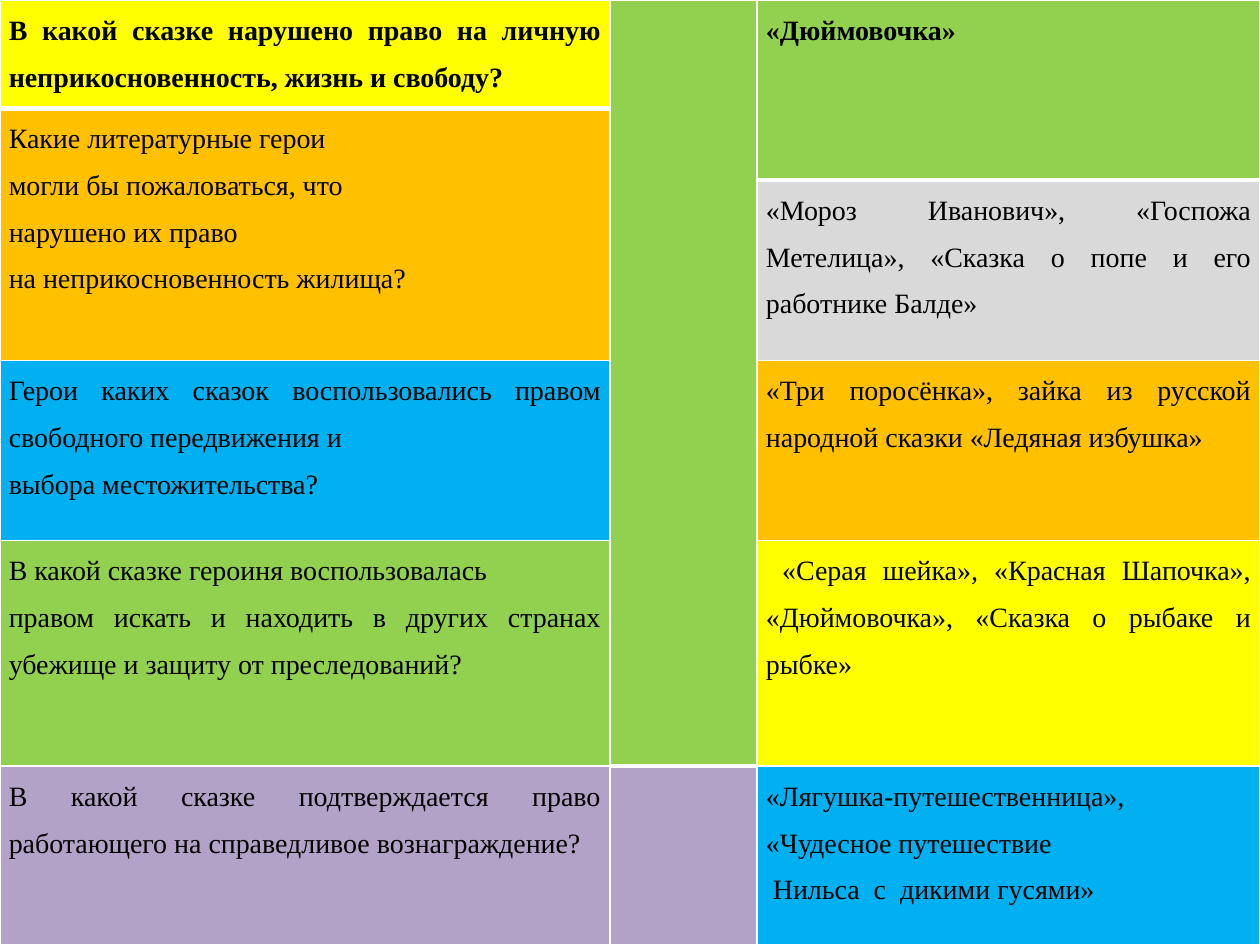
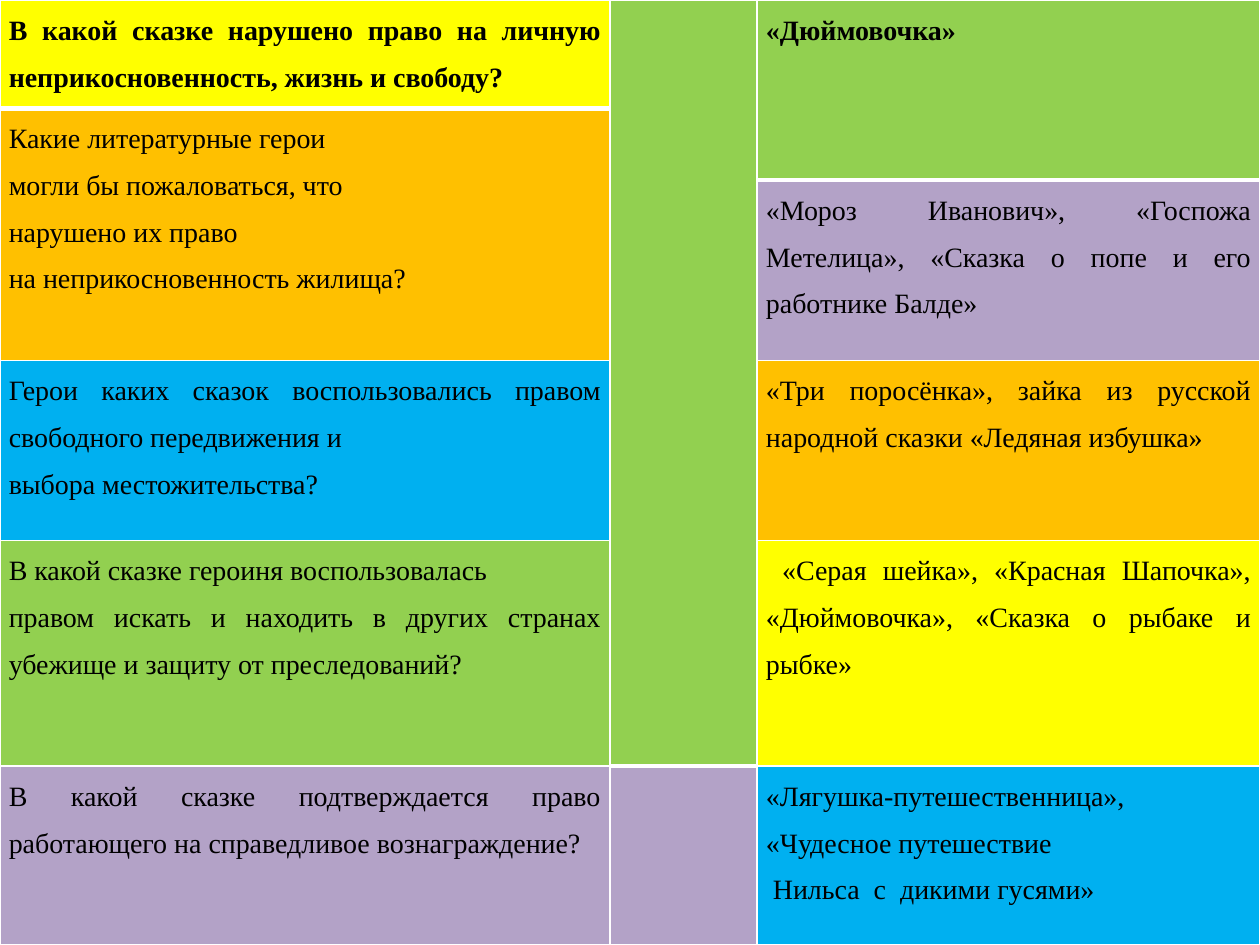
from dataclasses import dataclass

from lxml import etree
from pptx import Presentation
from pptx.dml.color import RGBColor as RGB
from pptx.enum.text import PP_ALIGN as Align
from pptx.oxml.ns import qn
from pptx.util import Inches, Pt


@dataclass(frozen=True)
class Theme:
    """Colours and type settings shared by the slides."""

    yellow: str = "FFFF00"
    green: str = "92D050"
    orange: str = "FFC000"
    blue: str = "00B0F0"
    violet: str = "B3A2C7"
    grey: str = "D9D9D9"
    border: str = "FFFFFF"
    text: str = "000000"
    font: str = "Times New Roman"
    size: int = 16
    spacing: float = 1.5
    inset: float = 0.07
    thin: int = 1
    thick: int = 3


T = Theme()
COL_WIDTHS = (4.84, 1.17, 3.99)
ROW_HEIGHTS = (0.86, 0.57, 1.43, 1.43, 1.79, 1.42)

# Each entry: row, rows spanned, fill, paragraphs.
QUESTIONS = (
    (0, 1, T.yellow, ("В какой сказке нарушено право на личную неприкосновенность, жизнь и свободу?",)),
    (1, 2, T.orange, ("Какие литературные герои ", "могли бы пожаловаться, что ",
                      "нарушено их право ", "на неприкосновенность жилища?")),
    (3, 1, T.blue, ("Герои каких сказок воспользовались правом свободного передвижения и ",
                    "выбора местожительства?")),
    (4, 1, T.green, ("В какой сказке героиня воспользовалась ",
                     "правом искать и находить в других странах убежище и защиту от преследований?")),
    (5, 1, T.violet, ("В какой сказке подтверждается право работающего на справедливое вознаграждение?",)),
)
DIVIDER = ((0, 5, T.green, ()), (5, 1, T.violet, ()))


def answers(frost_fill):
    """Return the answer column with the given fill behind the second answer."""
    return (
        (0, 2, T.green, ("«Дюймовочка»",)),
        (2, 1, frost_fill, ("«Мороз Иванович», «Госпожа Метелица», «Сказка о попе и его работнике Балде»",)),
        (3, 1, T.orange, ("«Три поросёнка», зайка из русской народной сказки «Ледяная избушка»",)),
        (4, 1, T.yellow, (" «Серая шейка», «Красная Шапочка», «Дюймовочка», «Сказка о рыбаке и рыбке»",)),
        (5, 1, T.blue, ("«Лягушка-путешественница», «Чудесное путешествие ",
                        " Нильса  с  дикими гусями»")),
    )


def set_borders(cell, bottom):
    """Draw the cell's borders, with its own width at the bottom."""
    tcPr = cell._tc.get_or_add_tcPr()
    for side, width in (("L", T.thin), ("R", T.thin), ("T", T.thin), ("B", bottom)):
        ln = etree.SubElement(tcPr, qn(f"a:ln{side}"), w=str(Pt(width)))
        fill = etree.SubElement(ln, qn("a:solidFill"))
        etree.SubElement(fill, qn("a:srgbClr"), val=T.border)


def write_cell(cell, lines, bold):
    """Fill a cell with justified paragraphs."""
    cell.margin_left = cell.margin_right = Inches(T.inset)
    cell.margin_top = cell.margin_bottom = 0
    tf = cell.text_frame
    tf.text = "\n".join(lines)
    for p in tf.paragraphs:
        p.alignment = Align.JUSTIFY
        p.line_spacing = T.spacing
        for r in p.runs:
            r.font.name = T.font
            r.font.size = Pt(T.size)
            r.font.bold = bold
            r.font.color.rgb = RGB.from_string(T.text)


def add_column(table, col, entries):
    """Place one column of cells, merging those that span several rows."""
    for row, span, colour, lines in entries:
        cell = table.cell(row, col)
        if span > 1:
            cell.merge(table.cell(row + span - 1, col))
        set_borders(cell, T.thin if row else T.thick)
        cell.fill.solid()
        cell.fill.fore_color.rgb = RGB.from_string(colour)
        if lines:
            write_cell(cell, lines, bold=row == 0)


def add_quiz_table(slide, box, frost_fill):
    """Add the question and answer table in the given box."""
    table = slide.shapes.add_table(len(ROW_HEIGHTS), len(COL_WIDTHS), *box).table
    for column, width in zip(table.columns, COL_WIDTHS):
        column.width = Inches(width)
    for row, height in zip(table.rows, ROW_HEIGHTS):
        row.height = Inches(height)
    for col, entries in enumerate((QUESTIONS, DIVIDER, answers(frost_fill))):
        add_column(table, col, entries)


def main():
    """Build and save both quiz slides."""
    prs = Presentation()
    prs.slide_width, prs.slide_height = Inches(10), Inches(7.5)
    box = (0, 0, prs.slide_width, prs.slide_height)
    for frost_fill in (T.grey, T.violet):
        s = prs.slides.add_slide(prs.slide_layouts[6])
        add_quiz_table(s, box, frost_fill)
    prs.save("out.pptx")


if __name__ == "__main__":
    main()
